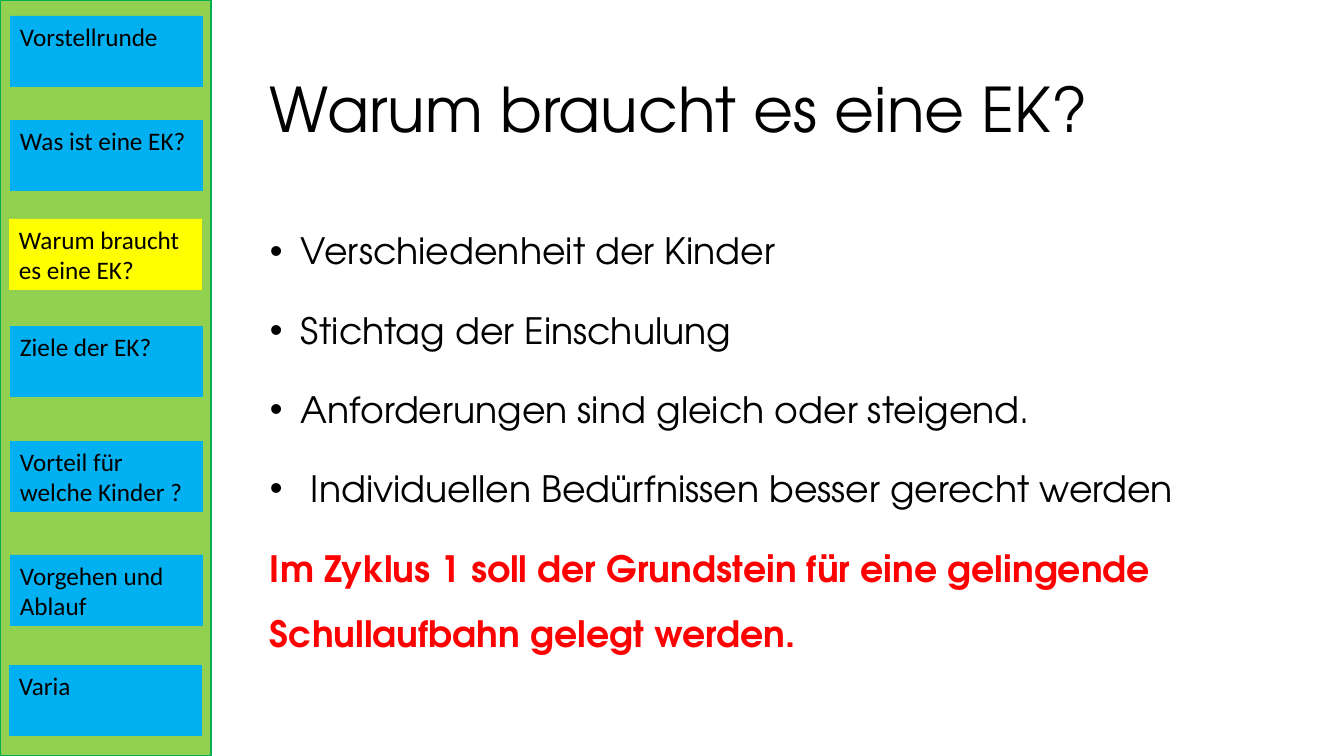
"""Build the slide on why an EK is needed, with its agenda sidebar."""
from dataclasses import dataclass

from lxml import etree
from pptx import Presentation
from pptx.dml.color import RGBColor
from pptx.enum import shapes, text
from pptx.oxml import ns
from pptx import util as u


@dataclass(frozen=True)
class Theme:
    ink: str = "000000"
    accent: str = "FF0000"
    sidebar: str = "92D050"
    sidebar_edge: str = "00B050"
    step: str = "00B0F0"
    current_step: str = "FFFF00"
    heading_font: str = "TeX Gyre Adventor"
    step_font: str = "Calibri"
    title_size: float = 44
    body_size: float = 25.9
    step_size: float = 18


theme = Theme()
WIDTH, HEIGHT = 1344, 756
SCALE = 12192000 / WIDTH
INDENT = 31
CONTENT_LEFT, CONTENT_WIDTH = 260, 992


def px(*lengths):
    return [u.Emu(round(length * SCALE)) for length in lengths]


def add_span(para, wording, font, size, color=theme.ink, bold=False):
    span = para.add_run()
    span.text = wording
    span.font.name = font
    span.font.size = u.Pt(size)
    span.font.bold = bold
    span.font.color.rgb = RGBColor.from_string(color)


deck = Presentation()
deck.slide_width, deck.slide_height = px(WIDTH, HEIGHT)
page = deck.slides.add_slide(deck.slide_layouts[6])

title = page.shapes.add_textbox(*px(CONTENT_LEFT, 40, CONTENT_WIDTH, 146)).text_frame
title.word_wrap = True
title.vertical_anchor = text.MSO_ANCHOR.MIDDLE
title.paragraphs[0].line_spacing = 0.9
add_span(title.paragraphs[0], "Warum braucht es eine EK?", theme.heading_font, theme.title_size)

reasons = [
    "Verschiedenheit der Kinder",
    "Stichtag der Einschulung",
    "Anforderungen sind gleich oder steigend.",
    " Individuellen Bedürfnissen besser gerecht werden",
]
conclusion = "Im Zyklus 1 soll der Grundstein für eine gelingende Schullaufbahn gelegt werden."

body = page.shapes.add_textbox(*px(CONTENT_LEFT, 202, CONTENT_WIDTH, 480)).text_frame
body.word_wrap = True
for index, wording in enumerate([*reasons, conclusion]):
    para = body.add_paragraph() if index else body.paragraphs[0]
    para.line_spacing = 1.5
    para.space_before = u.Pt(10 if index else 0)
    is_reason = index < len(reasons)
    if is_reason:
        properties = para._p.get_or_add_pPr()
        indent = px(INDENT)[0]
        properties.set("marL", str(indent))
        properties.set("indent", str(-indent))
        etree.SubElement(properties, ns.qn("a:buFont")).set("typeface", "Arial")
        etree.SubElement(properties, ns.qn("a:buChar")).set("char", "•")
    add_span(para, wording, theme.heading_font, theme.body_size,
             color=theme.ink if is_reason else theme.accent, bold=not is_reason)

sidebar = page.shapes.add_shape(shapes.MSO_SHAPE.RECTANGLE, *px(0, 0, 211, HEIGHT))
sidebar.shadow.inherit = False
sidebar.fill.solid()
sidebar.fill.fore_color.rgb = RGBColor.from_string(theme.sidebar)
sidebar.line.color.rgb = RGBColor.from_string(theme.sidebar_edge)
sidebar.line.width = u.Pt(1)

current = "Warum braucht es eine EK?"
steps = [
    ("Vorstellrunde", 10, 16),
    ("Was ist eine EK?", 10, 120),
    (current, 9, 219),
    ("Ziele der EK?", 10, 326),
    ("Vorteil für welche Kinder ?", 10, 441),
    ("Vorgehen und Ablauf", 10, 555),
    ("Varia", 9, 665),
]
for wording, left, top in steps:
    step = page.shapes.add_shape(shapes.MSO_SHAPE.RECTANGLE, *px(left, top, 193, 71))
    step.shadow.inherit = False
    step.fill.solid()
    step.fill.fore_color.rgb = RGBColor.from_string(
        theme.current_step if wording == current else theme.step)
    step.line.fill.background()
    label = step.text_frame
    label.word_wrap = True
    label.vertical_anchor = text.MSO_ANCHOR.TOP
    label.paragraphs[0].alignment = text.PP_ALIGN.LEFT
    add_span(label.paragraphs[0], wording, theme.step_font, theme.step_size)

deck.save("out.pptx")
